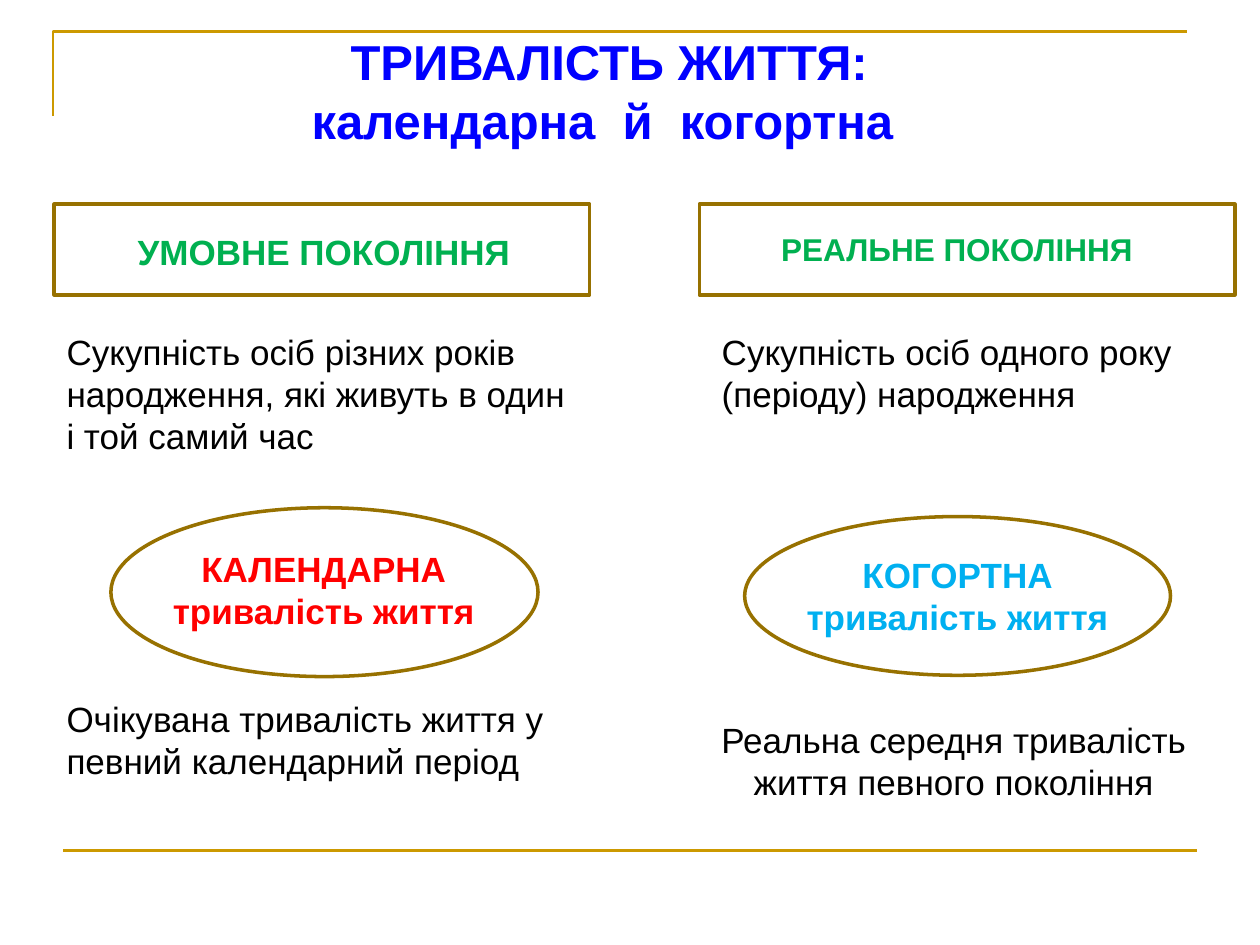
from collections import namedtuple

from lxml.etree import SubElement
from pptx import Presentation
from pptx.dml.color import RGBColor
from pptx.enum.shapes import MSO_CONNECTOR as Connector, MSO_SHAPE as Shape
from pptx.enum.text import MSO_ANCHOR as Anchor, PP_ALIGN as Align
from pptx.oxml.ns import qn
from pptx.util import Inches, Pt

CELL = Inches(0.1)  # the slide is a grid of 100 columns and 75 rows
COLUMNS, ROWS = 100, 75
GOLD, BRONZE, GREEN, BLACK = "CC9900", "977100", "00B050", "000000"

Box = namedtuple("Box", "left top width height")
Note = namedtuple("Note", "box lines align gap")
Generation = namedtuple(
    "Generation", "heading heading_box heading_size wrap notes oval oval_text lines accent")


def cells(*counts):
    return [round(count * CELL) for count in counts]


def inside(region, box):
    return Box(region.left + box[0], region.top + box[1], box[2], box[3])


def color(hex_string):
    return RGBColor.from_string(hex_string)


def set_line(part, hex_string, width):
    part.line.color.rgb = color(hex_string)
    part.line.width = Pt(width)


def add_text(slide, box, lines, size, hex_string, bold=False, align=Align.CENTER,
             anchor=Anchor.TOP, wrap=True, gap=0):
    """Write one paragraph per line; gap is the space in points before the last."""
    frame = slide.shapes.add_textbox(*cells(*box)).text_frame
    frame.word_wrap = wrap
    frame.vertical_anchor = anchor
    frame.text = "\n".join(lines)
    for paragraph in frame.paragraphs:
        paragraph.alignment = align
        font = paragraph.runs[0].font
        font.name, font.size, font.bold = "Arial", Pt(size), bold
        font.color.rgb = color(hex_string)
    if gap:
        frame.paragraphs[-1].space_before = Pt(gap)


def add_outline(slide, kind, box):
    outline = slide.shapes.add_shape(kind, *cells(*box))
    outline.shadow.inherit = False
    outline.fill.solid()
    outline.fill.fore_color.rgb = color("FFFFFF")
    set_line(outline, BRONZE, 2)


def add_frame(slide, region):
    # Corner at the top left
    right, bottom = region.left + region.width, region.top + region.height
    builder = slide.shapes.build_freeform(*cells(region.left, region.top + 6.7))
    builder.add_line_segments(
        [cells(region.left, region.top), cells(right, region.top)], close=False)
    corner = builder.convert_to_shape()
    corner.shadow.inherit = False
    corner.fill.background()
    set_line(corner, GOLD, 1.5)

    # Rule at the bottom
    rule = slide.shapes.add_connector(
        Connector.STRAIGHT, *cells(region.left + 0.8, bottom, right + 0.8, bottom))
    set_line(rule, GOLD, 1.5)
    SubElement(rule._element.spPr, qn("a:effectLst"))


def add_title(slide, region):
    add_text(slide, region, ["ТРИВАЛІСТЬ ЖИТТЯ:", "календарна  й  когортна "],
             28, "0000FF", bold=True, anchor=Anchor.MIDDLE)


def add_generation(slide, region, generation):
    # Heading in its frame
    add_outline(slide, Shape.RECTANGLE, inside(region, (0, 0, region.width, 7.2)))
    add_text(slide, inside(region, generation.heading_box), [generation.heading],
             generation.heading_size, GREEN, bold=True, wrap=generation.wrap)

    # Definitions
    for note in generation.notes:
        add_text(slide, inside(region, note.box), note.lines, 20, BLACK,
                 align=note.align, gap=note.gap)

    # Kind of life expectancy
    add_outline(slide, Shape.OVAL, inside(region, generation.oval))
    add_text(slide, inside(region, generation.oval_text), generation.lines, 20,
             generation.accent, bold=True)


CONDITIONAL = Generation(
    heading="УМОВНЕ ПОКОЛІННЯ", heading_box=(5.5, 1.6, 31.8, 4.4),
    heading_size=20, wrap=False,
    notes=[Note((0, 9.5, 41.7, 38),
                ["Сукупність осіб різних років",
                 "народження, які живуть в один",
                 "і той самий час",
                 "Очікувана тривалість життя у певний календарний період"],
                Align.LEFT, 138)],
    oval=(4.5, 24.1, 33.9, 13.4), oval_text=(7.7, 26.8, 27.4, 7.7),
    lines=["КАЛЕНДАРНА", "тривалість життя"], accent="FF0000")

REAL = Generation(
    heading="РЕАЛЬНЕ ПОКОЛІННЯ", heading_box=(0, 1.6, 40.9, 4),
    heading_size=18, wrap=True,
    notes=[Note((0.8, 9.5, 41.7, 10.8),
                ["Сукупність осіб одного року (періоду) народження"], Align.LEFT, 0),
           Note((0.5, 40.3, 39.4, 7.7),
                ["Реальна середня тривалість життя певного покоління"],
                Align.CENTER, 0)],
    oval=(3.6, 24.8, 33.8, 12.6), oval_text=(7.1, 27.2, 26.8, 7.7),
    lines=["КОГОРТНА тривалість життя"], accent="00B0F0")


def main():
    deck = Presentation()
    deck.slide_width, deck.slide_height = cells(COLUMNS, ROWS)
    slide = deck.slides.add_slide(deck.slide_layouts[6])

    add_frame(slide, Box(4.2, 2.5, 90, 65))
    add_title(slide, Box(4.3, 2, 88.1, 10.4))
    for left, generation in ((4.3, CONDITIONAL), (55.5, REAL)):
        add_generation(slide, Box(left, 16.2, 42.5, 48), generation)

    deck.save("out.pptx")


if __name__ == "__main__":
    main()
